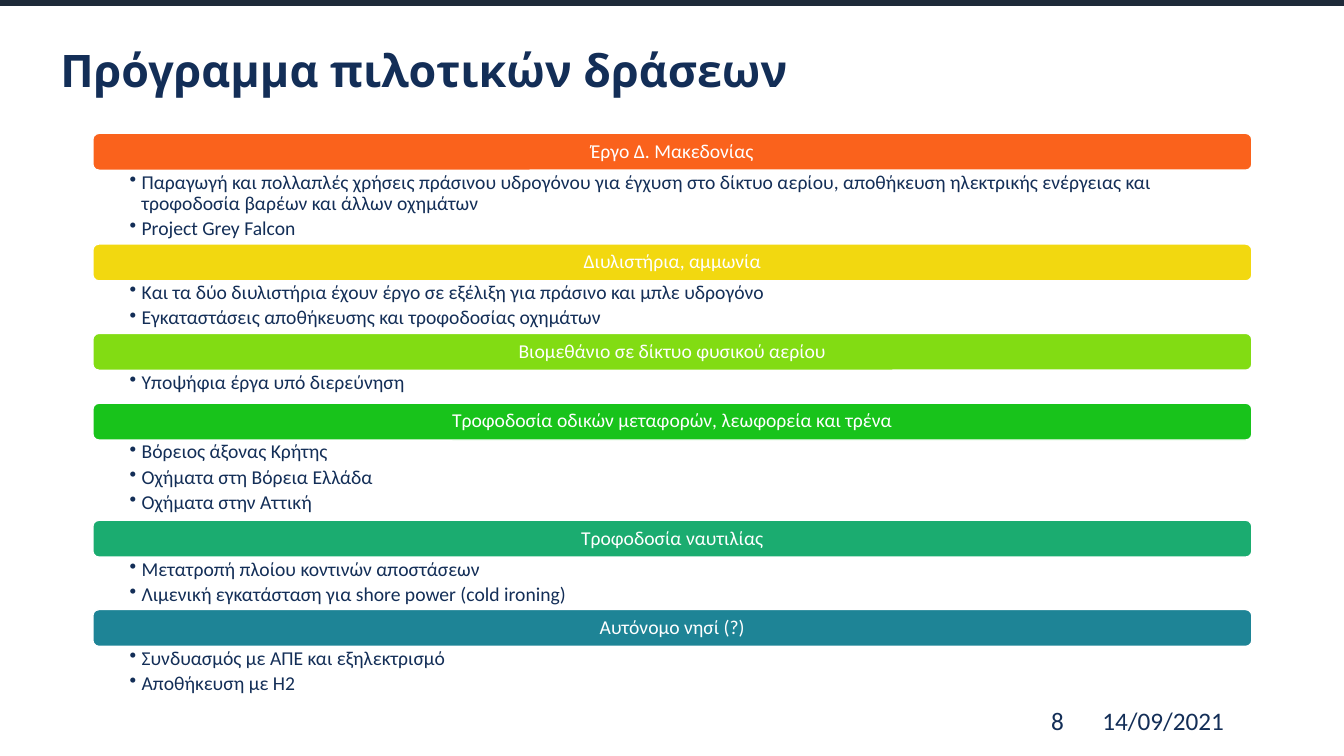
"""Build a slide listing the pilot actions programme as stacked coloured headings."""
from lxml import etree
from pptx import Presentation
from pptx.dml.color import RGBColor
from pptx.enum.shapes import MSO_SHAPE
from pptx.enum.text import MSO_ANCHOR
from pptx.oxml.ns import qn
from pptx.util import Cm, Pt

RECTANGLE = MSO_SHAPE.RECTANGLE
ROUNDED = MSO_SHAPE.ROUNDED_RECTANGLE
TOP = MSO_ANCHOR.TOP
MIDDLE = MSO_ANCHOR.MIDDLE

WHITE = RGBColor(0xFF, 0xFF, 0xFF)
NAVY = RGBColor(0x13, 0x2E, 0x57)
DARK = RGBColor(0x1E, 0x2A, 0x39)
ORANGE = RGBColor(0xFA, 0x62, 0x1C)
YELLOW = RGBColor(0xF2, 0xD8, 0x10)
LIME = RGBColor(0x82, 0xDC, 0x13)
GREEN = RGBColor(0x18, 0xC3, 0x1B)
JADE = RGBColor(0x1B, 0xAC, 0x70)
TEAL = RGBColor(0x1E, 0x84, 0x96)

PAGE_WIDTH, PAGE_HEIGHT = 33.87, 19.05
LIST_LEFT, LIST_TOP, LIST_WIDTH = 2.34, 3.36, 29.21
HEADING_HEIGHT = 0.93

SECTIONS = [
    ("Έργο Δ. Μακεδονίας", ORANGE, 1.86, [
        "Παραγωγή και πολλαπλές χρήσεις πράσινου υδρογόνου για έγχυση στο δίκτυο αερίου, "
        "αποθήκευση ηλεκτρικής ενέργειας και τροφοδοσία βαρέων και άλλων οχημάτων",
        "Project Grey Falcon"]),
    ("Διυλιστήρια, αμμωνία", YELLOW, 1.32, [
        "Και τα δύο διυλιστήρια έχουν έργο σε εξέλιξη για πράσινο και μπλε υδρογόνο",
        "Εγκαταστάσεις αποθήκευσης και τροφοδοσίας οχημάτων"]),
    ("Βιομεθάνιο σε δίκτυο φυσικού αερίου", LIME, 0.83, [
        "Υποψήφια έργα υπό διερεύνηση"]),
    ("Τροφοδοσία οδικών μεταφορών, λεωφορεία και τρένα", GREEN, 2.02, [
        "Βόρειος άξονας Κρήτης",
        "Οχήματα στη Βόρεια Ελλάδα",
        "Οχήματα στην Αττική"]),
    ("Τροφοδοσία ναυτιλίας", JADE, 1.32, [
        "Μετατροπή πλοίου κοντινών αποστάσεων",
        "Λιμενική εγκατάσταση για shore power (cold ironing)"]),
    ("Αυτόνομο νησί (?)", TEAL, 1.32, [
        "Συνδυασμός με ΑΠΕ και εξηλεκτρισμό",
        "Αποθήκευση με Η2"]),
]


def write_text(frame, lines, size=14, font="Calibri", color=NAVY, bold=False,
               anchor=TOP, insets=(0.25, 0.13, 0.25, 0.13), spacing=0.9,
               after=0, bullet=False):
    """Fill a text frame with one paragraph per line."""
    frame.word_wrap = True
    frame.vertical_anchor = anchor
    (frame.margin_left, frame.margin_top,
     frame.margin_right, frame.margin_bottom) = map(Cm, insets)
    for index, line in enumerate(lines):
        para = frame.add_paragraph() if index else frame.paragraphs[0]
        para.line_spacing = spacing
        para.space_after = Pt(after)
        if bullet:
            para.level = 1
            properties = para._p.get_or_add_pPr()
            properties.set("marL", str(Cm(0.3)))
            properties.set("indent", str(Cm(-0.3)))
            etree.SubElement(properties, qn("a:buChar")).set("char", "•")
        span = para.add_run()
        span.text = line
        span.font.size = Pt(size)
        span.font.name = font
        span.font.bold = bold
        span.font.color.rgb = color


class PilotPage:
    """Hold the current slide and draw its elements in centimetres."""

    def __init__(self, deck):
        """Add a blank slide to the deck."""
        self.shapes = deck.slides.add_slide(deck.slide_layouts[6]).shapes

    def bar(self, kind, left, top, width, height, fill, line):
        """Draw a filled bar."""
        box = self.shapes.add_shape(kind, Cm(left), Cm(top), Cm(width), Cm(height))
        box.shadow.inherit = False
        box.fill.solid()
        box.fill.fore_color.rgb = fill
        box.line.color.rgb = line
        box.line.width = Pt(1)
        return box

    def text(self, left, top, width, height, lines, **style):
        """Place a text box."""
        box = self.shapes.add_textbox(Cm(left), Cm(top), Cm(width), Cm(height))
        write_text(box.text_frame, lines, **style)

    def section(self, top, heading, color, height, actions):
        """Draw a heading bar with its bullets and return the bottom edge."""
        bar = self.bar(ROUNDED, LIST_LEFT, top, LIST_WIDTH, HEADING_HEIGHT, color, WHITE)
        write_text(bar.text_frame, [heading], color=WHITE, anchor=MIDDLE,
                   insets=(0.18, 0.15, 0.18, 0.15))
        top += HEADING_HEIGHT
        self.text(LIST_LEFT, top, LIST_WIDTH, height, actions, after=2.8,
                  insets=(0.93, 0.05, 0.28, 0.05), bullet=True)
        return top + height


def main():
    """Build and save the deck."""
    deck = Presentation()
    deck.slide_width, deck.slide_height = Cm(PAGE_WIDTH), Cm(PAGE_HEIGHT)
    page = PilotPage(deck)
    page.bar(RECTANGLE, 0, 0, PAGE_WIDTH, 0.13, DARK, DARK)
    page.text(1.27, 0.86, 30.28, 1.96, ["Πρόγραμμα πιλοτικών δράσεων"],
              size=32, font="Open Sans", bold=True, anchor=MIDDLE)
    top = LIST_TOP
    for section in SECTIONS:
        top = page.section(top, *section)
    page.text(27.53, 17.65, 5.8, 1.02, ["14/09/2021"], size=18, spacing=1.0)
    page.text(26.24, 17.65, 1.2, 1.02, ["8"], size=18, spacing=1.0)
    deck.save("out.pptx")


if __name__ == "__main__":
    main()
